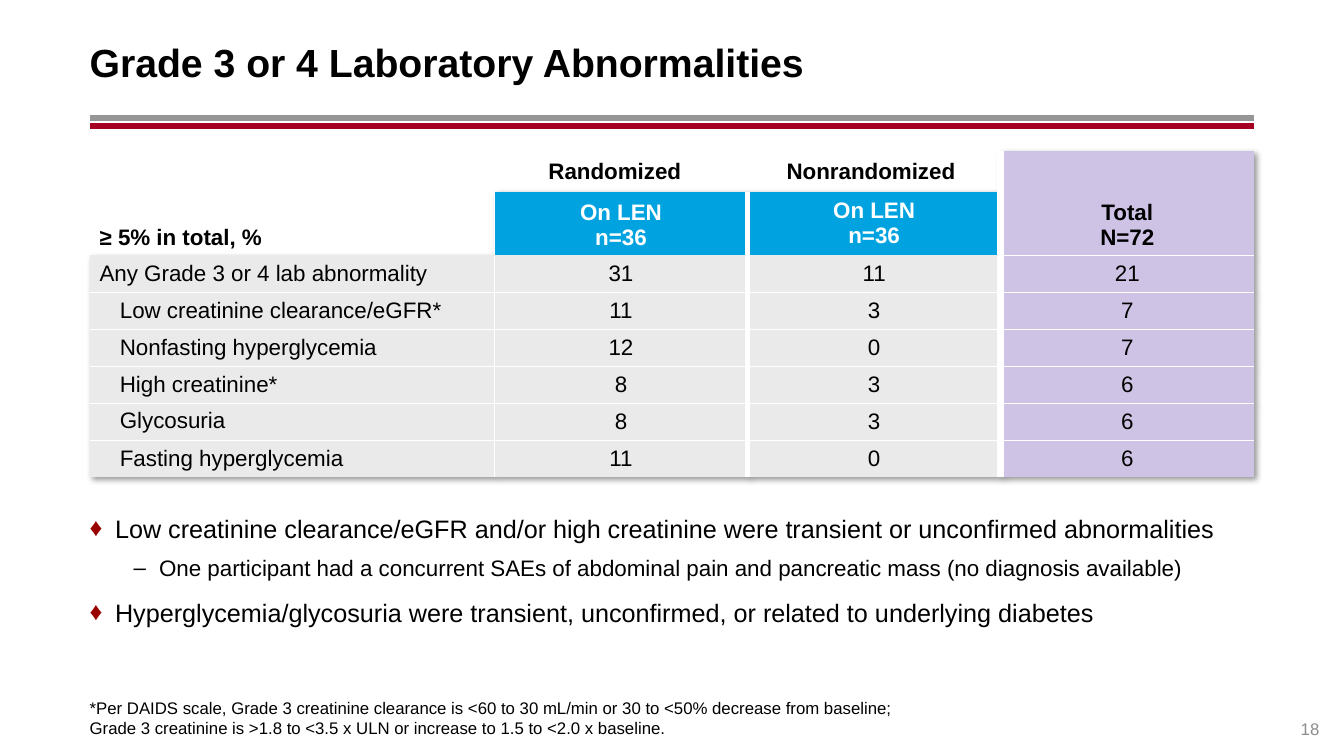
from dataclasses import dataclass

from lxml.etree import SubElement
from pptx import Presentation
from pptx.dml.color import RGBColor
from pptx.enum.shapes import MSO_CONNECTOR as Connector
from pptx.enum.text import MSO_ANCHOR as Anchor, PP_ALIGN as Align
from pptx.oxml import parse_xml
from pptx.oxml.ns import nsdecls, qn
from pptx.slide import Slide
from pptx.table import Table, _Cell as Cell
from pptx.text.text import TextFrame, _Paragraph as Paragraph
from pptx.util import Cm, Pt

COLORS = {
    "text": "000000", "white": "FFFFFF", "page": "8C8C8C",
    "gray_rule": "969696", "red_rule": "A50021", "diamond": "990000",
    "arm": "00A3E0", "total": "CEC3E5", "body": "EAEAEA",
}
FONT = "Arial"
LEFT, WIDTH = 2.26, 29.34
INSET, INSET_V = 0.25, 0.13

# Table layout: widths in cm, white gaps between columns in points
COLUMN_WIDTHS = [10.2, 6.38, 6.38, 6.38]
COLUMN_GAPS = [1, 4.5, 6]
ROW_GAP = 1
HEADER_HEIGHTS = [0.93, 1.61]
ROW_HEIGHT = 0.93
TOTAL = 3


@dataclass(frozen=True)
class Abnormality:
    label: str
    randomized: int
    nonrandomized: int
    total: int
    indent: float = 0.51
    line_spacing: float = 1.0


@dataclass(frozen=True)
class Finding:
    text: str
    bullet: str = "♦"
    bullet_color: str = "diamond"
    level: int = 0
    size: int = 18
    indent: float = 0.64
    before: int = 9


@dataclass(frozen=True)
class HeaderCell:
    row: int
    column: int
    text: str
    color: str = "text"
    anchor: Anchor = Anchor.MIDDLE
    align: Align = Align.CENTER
    left: float = INSET
    right: float = INSET


ABNORMALITIES = [
    Abnormality("Any Grade 3 or 4 lab abnormality", 31, 11, 21, indent=0),
    Abnormality("Low creatinine clearance/eGFR*", 11, 3, 7),
    Abnormality("Nonfasting hyperglycemia", 12, 0, 7),
    Abnormality("High creatinine*", 8, 3, 6),
    Abnormality("Glycosuria", 8, 3, 6, line_spacing=0.9),
    Abnormality("Fasting hyperglycemia", 11, 0, 6),
]
HEADERS = [
    HeaderCell(0, 1, "Randomized", right=0.56),
    HeaderCell(0, 2, "Nonrandomized", right=0.41),
    HeaderCell(0, TOTAL, "Total\nN=72", anchor=Anchor.BOTTOM),
    HeaderCell(1, 0, "≥ 5% in total, %", anchor=Anchor.BOTTOM, align=Align.LEFT),
    HeaderCell(1, 1, "On LEN\nn=36", "white", Anchor.BOTTOM, left=0, right=0),
    HeaderCell(1, 2, "On LEN\nn=36", "white", left=0, right=0),
]
FINDINGS = [
    Finding("Low creatinine clearance/eGFR and/or high creatinine were "
            "transient or unconfirmed abnormalities"),
    Finding("One participant had a concurrent SAEs of abdominal pain and "
            "pancreatic mass (no diagnosis available)",
            "–", "text", level=1, size=16, indent=1.75, before=6),
    Finding("Hyperglycemia/glycosuria were transient, unconfirmed, "
            "or related to underlying diabetes"),
]
FOOTNOTE = (
    "*Per DAIDS scale, Grade 3 creatinine clearance is <60 to 30 mL/min "
    "or 30 to <50% decrease from baseline;\n"
    "Grade 3 creatinine is >1.8 to <3.5 x ULN or increase to 1.5 to <2.0 x baseline."
)


def rgb(name: str) -> RGBColor:
    return RGBColor.from_string(COLORS[name])


def write_text(frame: TextFrame, text: str, *, size: int = 16, bold: bool = False,
               color: str = "text", align: Align = Align.LEFT) -> None:
    """Fill a frame, one paragraph per line of text."""
    for index, line in enumerate(text.split("\n")):
        paragraph = frame.add_paragraph() if index else frame.paragraphs[0]
        paragraph.alignment = align
        run = paragraph.add_run()
        run.text = line
        run.font.name, run.font.size, run.font.bold = FONT, Pt(size), bold
        run.font.color.rgb = rgb(color)


def add_frame(slide: Slide, left: float, top: float, width: float, height: float,
              anchor: Anchor, right: float = 0, vertical: float = 0) -> TextFrame:
    frame = slide.shapes.add_textbox(Cm(left), Cm(top), Cm(width), Cm(height)).text_frame
    frame.word_wrap = True
    frame.vertical_anchor = anchor
    frame.margin_left, frame.margin_right = Cm(0), Cm(right)
    frame.margin_top = frame.margin_bottom = Cm(vertical)
    return frame


def add_rule(slide: Slide, top: float, color: str) -> None:
    rule = slide.shapes.add_connector(
        Connector.STRAIGHT, Cm(LEFT), Cm(top), Cm(LEFT + WIDTH), Cm(top))
    rule.line.color.rgb = rgb(color)
    rule.line.width = Pt(4.25)
    SubElement(rule._element.spPr, qn("a:effectLst"))


def format_finding(paragraph: Paragraph, finding: Finding) -> None:
    paragraph.level = finding.level
    paragraph.space_before, paragraph.space_after = Pt(finding.before), Pt(2)
    props = paragraph._p.get_or_add_pPr()
    props.set("marL", str(Cm(finding.indent)))
    props.set("indent", str(Cm(-0.64)))
    bullet_color = SubElement(props, qn("a:buClr"))
    SubElement(bullet_color, qn("a:srgbClr"), val=COLORS[finding.bullet_color])
    SubElement(props, qn("a:buFont"), typeface=FONT)
    SubElement(props, qn("a:buChar"), char=finding.bullet)


def set_borders(cell: Cell, widths: dict[str, float]) -> None:
    """Draw white borders; a width of zero means no line."""
    props = cell._tc.get_or_add_tcPr()
    for index, (side, width) in enumerate(widths.items()):
        fill = (f'<a:solidFill><a:srgbClr val="{COLORS["white"]}"/></a:solidFill>'
                if width else "<a:noFill/>")
        props.insert(index, parse_xml(
            f'<a:{side} {nsdecls("a")} w="{Pt(width)}">{fill}</a:{side}>'))


def style_cell(table: Table, row: int, column: int) -> None:
    cell = table.cell(row, column)
    first_body = len(HEADER_HEIGHTS)
    if column == TOTAL:
        fill = "total"
    elif row >= first_body:
        fill = "body"
    else:
        fill = "arm" if row == 1 and column else None
    if fill:
        cell.fill.solid()
        cell.fill.fore_color.rgb = rgb(fill)
    else:
        cell.fill.background()
    # Gaps apply beside filled cells and between body rows
    gaps = [0, *COLUMN_GAPS, 0] if row else [0, 0, 0, COLUMN_GAPS[-1], 0]
    top_line = row > first_body or (row == first_body and column == TOTAL)
    bottom_line = (first_body <= row < len(table.rows) - 1
                   or (row < first_body and column == TOTAL))
    set_borders(cell, {"lnL": gaps[column], "lnR": gaps[column + 1],
                       "lnT": ROW_GAP * top_line, "lnB": ROW_GAP * bottom_line})


def add_lab_table(slide: Slide) -> None:
    heights = HEADER_HEIGHTS + [ROW_HEIGHT] * len(ABNORMALITIES)
    table = slide.shapes.add_table(
        len(heights), len(COLUMN_WIDTHS), Cm(LEFT), Cm(3.81),
        Cm(WIDTH), Cm(sum(heights))).table
    table.first_row = table.horz_banding = False
    props = table._tbl.tblPr
    props.find(qn("a:tableStyleId")).text = "{2D5ABB26-0587-4C30-8999-92F81FD0307C}"
    props.insert(0, parse_xml(
        f'<a:effectLst {nsdecls("a")}><a:outerShdw blurRad="50800" dist="38100" '
        'dir="2700000" algn="tl" rotWithShape="0"><a:srgbClr val="000000">'
        '<a:alpha val="40000"/></a:srgbClr></a:outerShdw></a:effectLst>'))
    for column, width in zip(table.columns, COLUMN_WIDTHS):
        column.width = Cm(width)
    for row, height in enumerate(heights):
        table.rows[row].height = Cm(height)
        for column in range(len(COLUMN_WIDTHS)):
            style_cell(table, row, column)
    table.cell(0, TOTAL).merge(table.cell(1, TOTAL))

    # Header rows
    for header in HEADERS:
        cell = table.cell(header.row, header.column)
        cell.vertical_anchor = header.anchor
        cell.margin_left, cell.margin_right = Cm(header.left), Cm(header.right)
        write_text(cell.text_frame, header.text, bold=True,
                   color=header.color, align=header.align)

    # Body rows
    for row, item in enumerate(ABNORMALITIES, len(HEADER_HEIGHTS)):
        values = (item.label, item.randomized, item.nonrandomized, item.total)
        for column, value in enumerate(values):
            cell = table.cell(row, column)
            cell.vertical_anchor = Anchor.MIDDLE
            write_text(cell.text_frame, str(value),
                       align=Align.CENTER if column else Align.LEFT)
        label = table.cell(row, 0)
        label.margin_left = Cm(INSET + item.indent)
        label.text_frame.paragraphs[0].line_spacing = item.line_spacing


def main() -> None:
    deck = Presentation()
    deck.slide_width, deck.slide_height = Cm(33.87), Cm(19.05)
    slide = deck.slides.add_slide(deck.slide_layouts[6])

    # Title and double rule
    add_rule(slide, 2.97, "gray_rule")
    add_rule(slide, 3.18, "red_rule")
    title = add_frame(slide, LEFT, 0.46, WIDTH, 2.18, Anchor.MIDDLE, INSET, INSET_V)
    write_text(title, "Grade 3 or 4 Laboratory Abnormalities", size=28, bold=True)

    add_lab_table(slide)

    # Findings
    findings = add_frame(slide, LEFT, 12.8, 30.99, 3.15, Anchor.TOP, INSET, INSET_V)
    write_text(findings, "\n".join(finding.text for finding in FINDINGS))
    for paragraph, finding in zip(findings.paragraphs, FINDINGS):
        paragraph.runs[0].font.size = Pt(finding.size)
        format_finding(paragraph, finding)

    # Footnote and page number
    footnote = add_frame(slide, LEFT, 17.2, WIDTH, 1.4, Anchor.BOTTOM)
    write_text(footnote, FOOTNOTE, size=12)
    page = add_frame(slide, LEFT + WIDTH, 17.6, 1.65, 1.02, Anchor.BOTTOM)
    write_text(page, "18", size=12, color="page", align=Align.RIGHT)

    deck.save("out.pptx")


if __name__ == "__main__":
    main()
